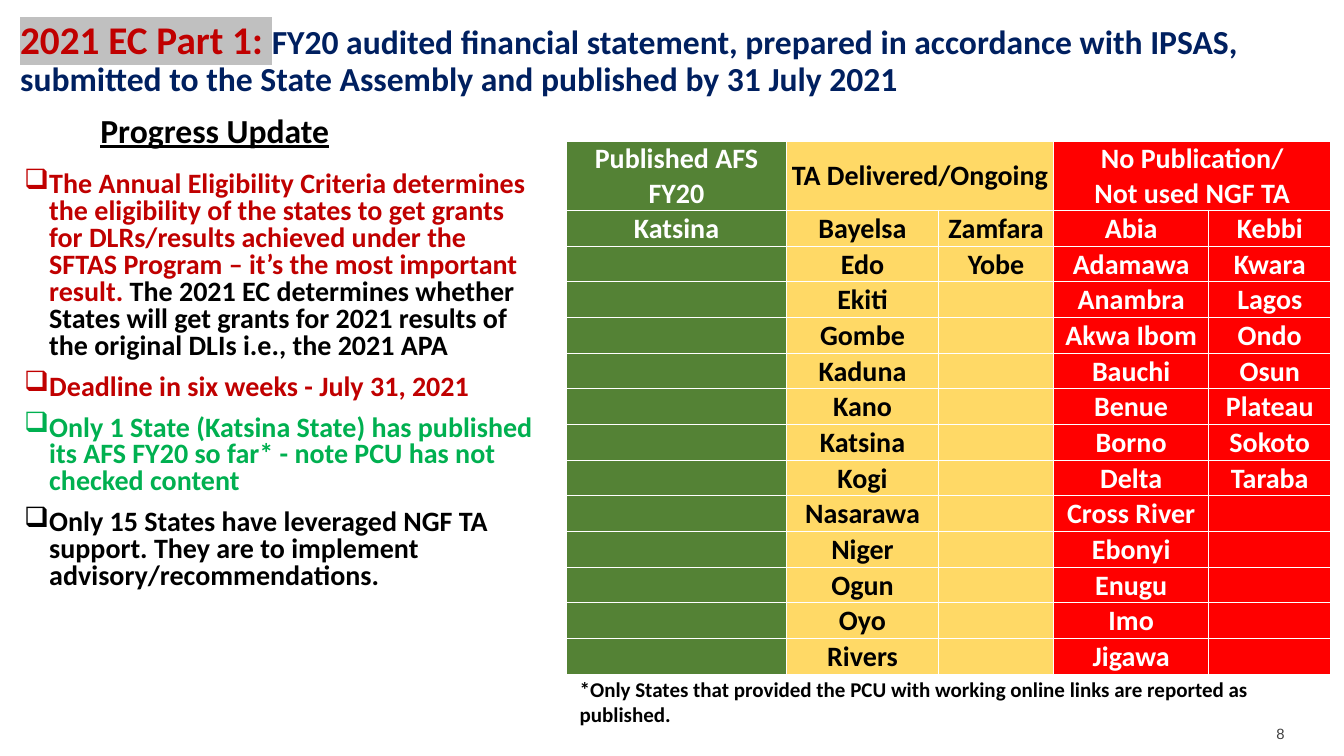
from itertools import zip_longest

from lxml import etree
from pptx import Presentation
from pptx.dml.color import RGBColor
from pptx.enum.text import MSO_ANCHOR, PP_ALIGN
from pptx.oxml.ns import qn
from pptx.util import Inches, Pt

WIDTH, HEIGHT = Inches(13.33), Inches(7.5)
LEFT, CENTER = PP_ALIGN.LEFT, PP_ALIGN.CENTER
MIDDLE = MSO_ANCHOR.MIDDLE
MARGINS = ("margin_left", "margin_top", "margin_right", "margin_bottom")
BOX_MARGINS = (0.1, 0.05, 0.1, 0.05)
CELL_MARGINS = (0.01, 0.01, 0.01, 0)

BLACK = RGBColor(0x00, 0x00, 0x00)
WHITE = RGBColor(0xFF, 0xFF, 0xFF)
CRIMSON = RGBColor(0xC0, 0x00, 0x00)
NAVY = RGBColor(0x00, 0x20, 0x60)
BRIGHT_GREEN = RGBColor(0x00, 0xB0, 0x50)
SILVER = RGBColor(0xC0, 0xC0, 0xC0)
CHARCOAL = RGBColor(0x40, 0x40, 0x40)
GREEN = RGBColor(0x54, 0x82, 0x35)
YELLOW = RGBColor(0xFF, 0xD9, 0x66)
RED = RGBColor(0xFF, 0x00, 0x00)

UPDATES = [
    [("The Annual Eligibility Criteria determines the eligibility of the states to get "
      "grants for DLRs/results achieved under the SFTAS Program – it’s the most "
      "important result.", CRIMSON),
     (" The 2021 EC determines whether States will get grants for 2021 results of the "
      "original DLIs i.e., the 2021 APA", BLACK)],
    [("Deadline in six weeks - July 31, 2021", CRIMSON)],
    [("Only 1 State (Katsina State) has published its AFS FY20 so far* - note PCU has "
      "not checked content", BRIGHT_GREEN)],
    [("Only 15 States have leveraged NGF TA support. They are to implement "
      "advisory/recommendations.", BLACK)],
]

HEADINGS = {0: ["Published AFS FY20"], 1: ["TA Delivered/Ongoing"],
            3: ["No Publication/", "Not used NGF TA"]}
STATES = [
    ["Katsina"],
    ["Bayelsa", "Edo", "Ekiti", "Gombe", "Kaduna", "Kano", "Katsina", "Kogi",
     "Nasarawa", "Niger", "Ogun", "Oyo", "Rivers"],
    ["Zamfara", "Yobe"],
    ["Abia", "Adamawa", "Anambra", "Akwa Ibom", "Bauchi", "Benue", "Borno", "Delta",
     "Cross River", "Ebonyi", "Enugu", "Imo", "Jigawa"],
    ["Kebbi", "Kwara", "Lagos", "Ondo", "Osun", "Plateau", "Sokoto", "Taraba"],
]
COLUMN_WEIGHTS = [2.18, 1.51, 1.14, 1.54, 1.21]
COLUMN_COLORS = [(GREEN, WHITE), (YELLOW, BLACK), (YELLOW, BLACK),
                 (RED, WHITE), (RED, WHITE)]
HEADER_SHARE = 0.13


def place(left, top, width, height):
    return (int(WIDTH * left / 100), int(HEIGHT * top / 100),
            int(WIDTH * width / 100), int(HEIGHT * height / 100))


def apply_format(target, values):
    for name, value in values.items():
        setattr(target, name, value)


def set_margins(target, margins):
    apply_format(target, dict(zip(MARGINS, map(Inches, margins))))


def add_span(para, text, size, color, bold=True, name="Calibri", underline=False):
    span = para.add_run()
    span.text = text
    apply_format(span.font, {"size": Pt(size), "bold": bold, "name": name,
                             "underline": underline})
    span.font.color.rgb = color
    return span


def highlight(span, color):
    mark = etree.Element(qn("a:highlight"))
    etree.SubElement(mark, qn("a:srgbClr"), val=str(color))
    span.font.fill
    span._r.rPr.find(qn("a:solidFill")).addnext(mark)


def add_box(page, area, margins=BOX_MARGINS, align=LEFT):
    frame = page.shapes.add_textbox(*place(*area)).text_frame
    frame.word_wrap = True
    set_margins(frame, margins)
    frame.paragraphs[0].alignment = align
    return frame


def add_title(page):
    para = add_box(page, (1.5, 2.67, 96.77, 10.53), (0, 0, 0, 0)).paragraphs[0]
    para.line_spacing = 0.9
    highlight(add_span(para, "2021 EC Part 1: ", 28, CRIMSON), SILVER)
    add_span(para, "FY20 audited financial statement, prepared in accordance with IPSAS, "
             "submitted to the State Assembly and published by 31 July 2021", 24, NAVY)


def add_bullet(para, symbol):
    properties = para._p.get_or_add_pPr()
    properties.set("marL", str(Inches(0.25)))
    properties.set("indent", str(-Inches(0.25)))
    etree.SubElement(properties, qn("a:buChar"), char=symbol)


def add_updates(page):
    frame = add_box(page, (1.05, 22.13, 39.46, 64.13))
    for index, update in enumerate(UPDATES):
        para = frame.add_paragraph() if index else frame.paragraphs[0]
        apply_format(para, {"line_spacing": 0.8, "space_before": Pt(10)})
        add_bullet(para, "❑")
        for text, color in update:
            add_span(para, text, 20, color)


def add_border(cell, side, points):
    line = etree.SubElement(cell._tc.get_or_add_tcPr(), qn(f"a:ln{side}"),
                            w=str(Pt(points)))
    fill = etree.SubElement(line, qn("a:solidFill"))
    etree.SubElement(fill, qn("a:srgbClr"), val=str(WHITE))


def fill_cell(cell, lines, colors, row):
    background, ink = colors
    set_margins(cell, CELL_MARGINS)
    cell.vertical_anchor = MIDDLE
    for side in "LRTB":
        thick = (row, side) in ((0, "B"), (1, "T"))
        add_border(cell, side, 1.5 if thick else 1)
    cell.fill.solid()
    cell.fill.fore_color.rgb = background
    for index, text in enumerate(lines):
        para = cell.text_frame.add_paragraph() if index else cell.text_frame.paragraphs[0]
        para.alignment = CENTER
        add_span(para, text, 20, ink)


def add_state_table(page):
    area = place(42.16, 18.67, 56.86, 70.53)
    width, height = area[2:]
    body = list(zip_longest(*STATES))
    table = page.shapes.add_table(len(body) + 1, len(STATES), *area).table
    apply_format(table, {"first_row": False, "horz_banding": False})
    for column, weight in zip(table.columns, COLUMN_WEIGHTS):
        column.width = int(width * weight / sum(COLUMN_WEIGHTS))
    for index, row in enumerate(table.rows):
        share = (1 - HEADER_SHARE) / len(body) if index else HEADER_SHARE
        row.height = int(height * share)
    for column, colors in enumerate(COLUMN_COLORS):
        fill_cell(table.cell(0, column), HEADINGS.get(column, []), colors, 0)
        for row, states in enumerate(body, 1):
            lines = [states[column]] if states[column] else []
            fill_cell(table.cell(row, column), lines, colors, row)
    for first in (1, 3):
        table.cell(0, first).merge(table.cell(0, first + 1))


def main():
    deck = Presentation()
    apply_format(deck, {"slide_width": WIDTH, "slide_height": HEIGHT})
    page = deck.slides.add_slide(deck.slide_layouts[6])
    add_title(page)
    add_updates(page)
    add_state_table(page)
    heading = add_box(page, (1.95, 13.87, 28.06, 6.67), align=CENTER)
    add_span(heading.paragraphs[0], "Progress Update", 24, BLACK, underline=True)
    number = add_box(page, (94.97, 95.47, 2.1, 2.8), (0, 0.03, 0, 0))
    add_span(number.paragraphs[0], "8", 10.6, CHARCOAL, bold=False, name="Arial")
    note = add_box(page, (42.39, 88.8, 55.89, 8.13))
    add_span(note.paragraphs[0], "*Only States that provided the PCU with working online "
             "links are reported as published.", 15, BLACK)
    deck.save("out.pptx")


if __name__ == "__main__":
    main()
